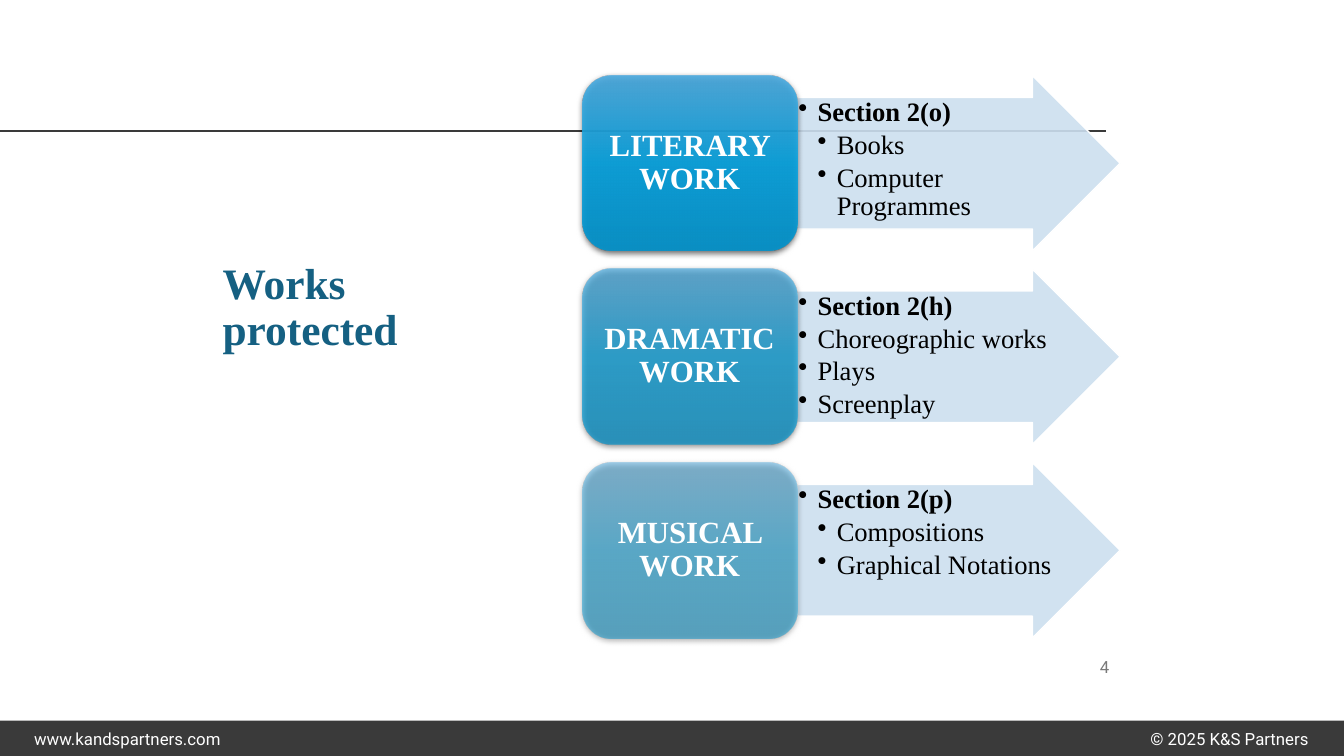
from lxml import etree
from pptx import Presentation
from pptx.dml.color import RGBColor
from pptx.enum.shapes import MSO_CONNECTOR as Conn, MSO_SHAPE as Geo
from pptx.enum.text import MSO_ANCHOR as Anchor, PP_ALIGN as Align
from pptx.oxml import parse_xml
from pptx.oxml.ns import nsdecls, qn
from pptx.util import Inches, Pt

WHITE = RGBColor(0xFF, 0xFF, 0xFF)
BLACK = RGBColor(0, 0, 0)
DARK = RGBColor(0x3A, 0x3A, 0x3A)
GREY = RGBColor(0x79, 0x79, 0x79)
TEAL = RGBColor(0x15, 0x60, 0x82)
PALE = RGBColor(0xCC, 0xDF, 0xEF)
SHADE = (RGBColor(0x4C, 0xAA, 0xDF), RGBColor(0x05, 0xA2, 0xDF),
         RGBColor(0x00, 0x92, 0xCB))
SERIF, SANS = "Times New Roman", "Roboto"
INSETS = (0.1, 0.05, 0.1, 0.05)

# Work, opacity of its card in percent, points as (level, text)
WORKS = [
    ("LITERARY WORK", 90,
     [(1, "Section 2(o)"), (2, "Books"), (2, "Computer Programmes")]),
    ("DRAMATIC WORK", 70,
     [(1, "Section 2(h)"), (1, "Choreographic works"), (1, "Plays"),
      (1, "Screenplay")]),
    ("MUSICAL WORK", 50,
     [(1, "Section 2(p)"), (2, "Compositions"), (2, "Graphical Notations")]),
]


class Page:
    def __init__(self, deck):
        self.slide = deck.slides.add_slide(deck.slide_layouts[6])
        self.shapes = self.slide.shapes

    def shape(self, geo, box, fill, line=None):
        item = self.shapes.add_shape(geo, *map(Inches, box))
        item.shadow.inherit = False
        item.fill.solid()
        item.fill.fore_color.rgb = fill
        if line is None:
            item.line.fill.background()
        else:
            item.line.color.rgb = line
            item.line.width = Pt(1)
        return item

    def rule(self, x, y, end, color):
        line = self.shapes.add_connector(
            Conn.STRAIGHT, Inches(x), Inches(y), Inches(end), Inches(y))
        line.line.color.rgb = color
        line.line.width = Pt(1)
        etree.SubElement(line._element.spPr, qn("a:effectLst"))

    def frame(self, box, insets=INSETS, anchor=Anchor.MIDDLE):
        frame = self.shapes.add_textbox(*map(Inches, box)).text_frame
        frame.word_wrap = True
        frame.vertical_anchor = anchor
        (frame.margin_left, frame.margin_top, frame.margin_right,
         frame.margin_bottom) = map(Inches, insets)
        return frame

    def style(self, para, size, color, face, bold=False):
        font = para.font
        font.size, font.name, font.bold = Pt(size), face, bold
        font.color.rgb = color

    def text(self, box, words, size, color, face=SANS, bold=False,
             align=Align.LEFT, space=1.0, insets=INSETS):
        para = self.frame(box, insets).paragraphs[0]
        para.text = words
        para.alignment = align
        para.line_spacing = space
        self.style(para, size, color, face, bold)

    def points(self, box, items):
        frame = self.frame(box, (0.01,) * 4, Anchor.TOP)
        for num, (level, words) in enumerate(items):
            para = frame.add_paragraph() if num else frame.paragraphs[0]
            para.text = words
            para.level = level
            para.line_spacing = 0.9
            para.space_after = Pt(2.85)
            props = para._p.get_or_add_pPr()
            props.set("marL", str(Inches(0.19 * level)))
            props.set("indent", str(Inches(-0.19)))
            etree.SubElement(props, qn("a:buChar"), char="•")
            self.style(para, 19, BLACK, SERIF, num == 0)

    def arrow(self, box):
        item = self.shape(Geo.RIGHT_ARROW, box, PALE, WHITE)
        item.adjustments[0] = 0.75
        tint = item._element.spPr.find(".//" + qn("a:srgbClr"))
        etree.SubElement(tint, qn("a:alpha"), val="90000")

    def card(self, box, alpha):
        item = self.shape(Geo.ROUNDED_RECTANGLE, box, SHADE[1])
        props = item._element.spPr
        stops = "".join(
            f'<a:gs pos="{num * 50000}"><a:srgbClr val="{tone}">'
            f'<a:alpha val="{alpha * 1000}"/></a:srgbClr></a:gs>'
            for num, tone in enumerate(SHADE))
        grad = parse_xml(
            f'<a:gradFill {nsdecls("a")} rotWithShape="1"><a:gsLst>{stops}'
            '</a:gsLst><a:lin ang="5400000" scaled="0"/></a:gradFill>')
        props.replace(props.find(qn("a:solidFill")), grad)
        glow = parse_xml(
            f'<a:effectLst {nsdecls("a")}><a:outerShdw blurRad="{Pt(4.5)}" '
            f'dist="{Pt(1.5)}" dir="5400000" algn="ctr" rotWithShape="0">'
            '<a:srgbClr val="000000"><a:alpha val="63000"/></a:srgbClr>'
            '</a:outerShdw></a:effectLst>')
        props.replace(props.find(qn("a:effectLst")), glow)


def main():
    deck = Presentation()
    deck.slide_width, deck.slide_height = Inches(13.33), Inches(7.5)
    page = Page(deck)

    # Footer band and top rule
    page.shape(Geo.RECTANGLE, (0, 7.15, 13.33, 0.35), DARK)
    page.text((0.24, 7.15, 2.28, 0.35), "www.kandspartners.com", 12, WHITE)
    page.text((11.18, 7.16, 2.03, 0.34), "© 2025 K&S Partners", 12, WHITE,
              align=Align.CENTER)
    page.rule(0, 1.3, 10.97, DARK)

    # Title, raised above the middle by its bottom inset
    page.text((2.11, 0.75, 2.5, 5.58), "Works protected", 31, TEAL, SERIF,
              True, space=0.9, insets=(0.1, 0.05, 0.1, 1.01))

    # One row per kind of work
    for row, (name, alpha, items) in enumerate(WORKS):
        top = 0.75 + 1.92 * row
        page.arrow((7.91, top, 3.2, 1.74))
        page.points((7.91, top + 0.22, 2.54, 1.31), items)
        page.card((5.78, top, 2.13, 1.74), alpha)
        page.text((5.86, top + 0.08, 1.96, 1.57), name, 22, WHITE, SERIF,
                  True, Align.CENTER, 0.9, (0.09, 0.05, 0.09, 0.05))

    # Page number
    page.text((10.65, 6.42, 0.45, 0.4), "4", 12, GREY, align=Align.RIGHT)
    deck.save("out.pptx")


if __name__ == "__main__":
    main()
